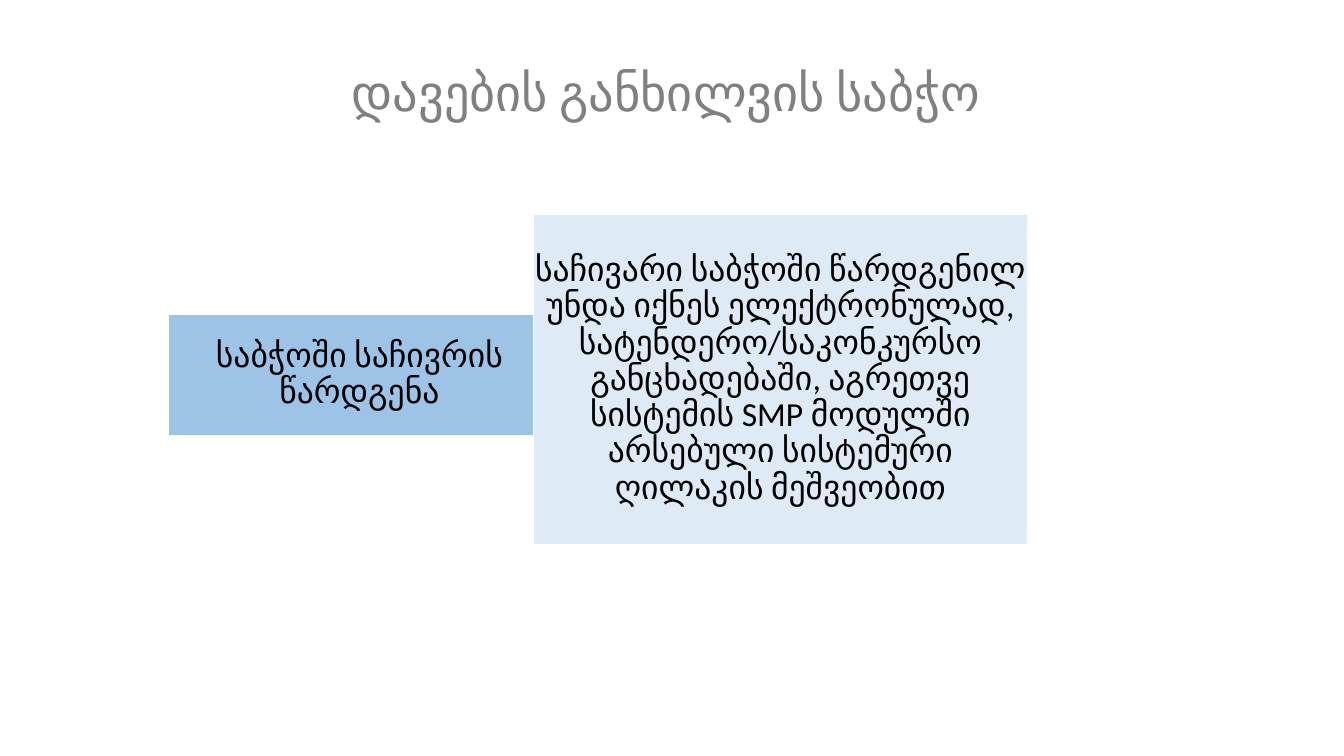
import pptx
import pptx.util
import pptx.dml.color
import pptx.enum.shapes
import pptx.enum.text

Inches, Pt = pptx.util.Inches, pptx.util.Pt
RGBColor = pptx.dml.color.RGBColor
ALIGN, ANCHOR = pptx.enum.text.PP_ALIGN, pptx.enum.text.MSO_ANCHOR

GREY = RGBColor(0x80, 0x80, 0x80)
BLACK = RGBColor(0, 0, 0)
WHITE = RGBColor(0xFF, 0xFF, 0xFF)
BLUE = RGBColor(0x9D, 0xC3, 0xE6)
PALE_BLUE = RGBColor(0xDE, 0xEB, 0xF7)

# Content
TITLE = "დავების განხილვის საბჭო"
BOXES = [  # text, fill, left, top, width, height
    ("საბჭოში საჩივრის წარდგენა", BLUE, 1.67, 3.12, 3.79, 1.2),
    ("საჩივარი საბჭოში წარდგენილ უნდა იქნეს ელექტრონულად, "
     "სატენდერო/საკონკურსო განცხადებაში, აგრეთვე სისტემის SMP მოდულში "
     "არსებული სისტემური ღილაკის მეშვეობით", PALE_BLUE, 5.29, 2.13, 4.9, 3.27),
]

# Layout
SLIDE_W, SLIDE_H = 13.33, 7.5
TITLE_W, TITLE_TOP, TITLE_H = 10, 0.18, 1.69


def write(shape, text, size=24, color=BLACK, anchor=ANCHOR.MIDDLE,
          left=0.01, top=0.02, right=0.01, bottom=0.02):
    tf = shape.text_frame
    tf.word_wrap = True
    tf.auto_size = pptx.enum.text.MSO_AUTO_SIZE.NONE
    tf.vertical_anchor = anchor
    tf.margin_left, tf.margin_right = Inches(left), Inches(right)
    tf.margin_top, tf.margin_bottom = Inches(top), Inches(bottom)
    p = tf.paragraphs[0]
    p.alignment = ALIGN.CENTER
    p.line_spacing = 0.9
    r = p.add_run()
    r.text = text
    r.font.name = "Calibri"
    r.font.size = Pt(size)
    r.font.color.rgb = color


def main():
    prs = pptx.Presentation()
    prs.slide_width, prs.slide_height = Inches(SLIDE_W), Inches(SLIDE_H)
    s = prs.slides.add_slide(prs.slide_layouts[5])

    # Title
    title = s.shapes.title
    title.left, title.top = Inches((SLIDE_W - TITLE_W) / 2), Inches(TITLE_TOP)
    title.width, title.height = Inches(TITLE_W), Inches(TITLE_H)
    write(title, TITLE, size=36, color=GREY, anchor=ANCHOR.BOTTOM,
          left=0.1, top=0.05, right=0.22, bottom=0.66)

    # Step and its explanation
    for text, fill, *frame in BOXES:
        sp = s.shapes.add_shape(
            pptx.enum.shapes.MSO_SHAPE.RECTANGLE, *map(Inches, frame))
        sp.shadow.inherit = False
        sp.fill.solid()
        sp.fill.fore_color.rgb = fill
        sp.line.color.rgb = WHITE
        sp.line.width = Pt(1)
        write(sp, text)

    prs.save("out.pptx")


if __name__ == "__main__":
    main()
